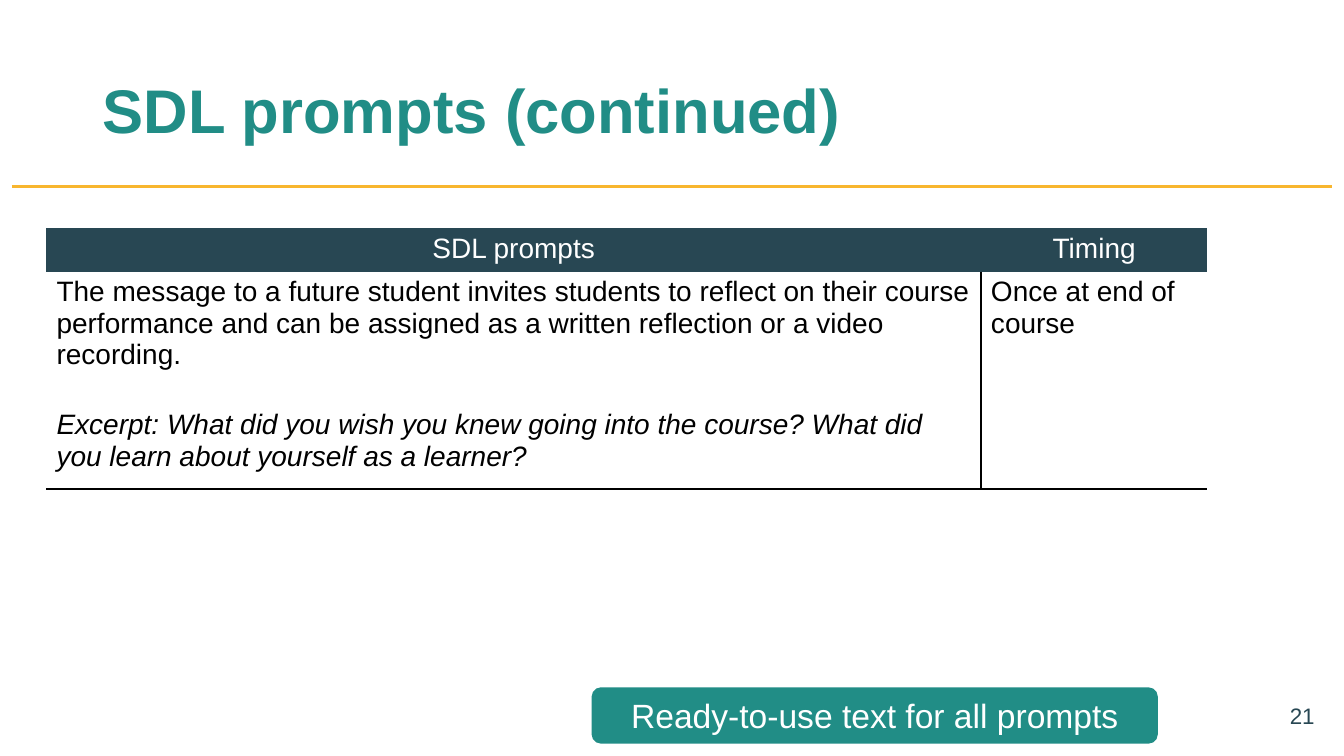
from pptx import Presentation
from pptx.dml.color import RGBColor
from pptx.enum.shapes import MSO_CONNECTOR as CONN, MSO_SHAPE as SHAPE
from pptx.enum.text import MSO_ANCHOR as ANCHOR, PP_ALIGN as ALIGN
from pptx.oxml import parse_xml
from pptx.oxml.ns import nsdecls, qn
from pptx.util import Cm, Pt

COLORS = {"teal": "218D86", "navy": "284753", "gold": "F8B62F",
          "white": "FFFFFF", "black": "000000"}
NO_STYLE = "{2D5ABB26-0587-4C30-8999-92F81FD0307C}"


def rgb(name):
    return RGBColor.from_string(COLORS[name])


def write(p, text, size=20, color="black", bold=False, italic=False,
          align=ALIGN.LEFT, before=None, after=None, spacing=None):
    p.alignment = align
    p.line_spacing = spacing
    if before is not None:
        p.space_before = Pt(before)
    if after is not None:
        p.space_after = Pt(after)
    r = p.add_run()
    r.text = text
    f = r.font
    f.name, f.size, f.bold, f.italic = "Arial", Pt(size), bold, italic
    f.color.rgb = rgb(color)


class SlideBuilder:
    """Draws styled elements on one slide."""

    def __init__(self, slide):
        self.shapes = slide.shapes

    def rule(self, x1, x2, y, color, width):
        line = self.shapes.add_connector(CONN.STRAIGHT, Cm(x1), Cm(y), Cm(x2), Cm(y))
        line.line.color.rgb = rgb(color)
        line.line.width = Pt(width)
        line._element.spPr.append(parse_xml(f"<a:effectLst {nsdecls('a')}/>"))

    def text(self, box, text, **fmt):
        tf = self.shapes.add_textbox(*map(Cm, box)).text_frame
        tf.word_wrap = True
        tf.vertical_anchor = ANCHOR.MIDDLE
        write(tf.paragraphs[0], text, **fmt)

    def button(self, box, text, fill, **fmt):
        sp = self.shapes.add_shape(SHAPE.ROUNDED_RECTANGLE, *map(Cm, box))
        sp.shadow.inherit = False
        sp.fill.solid()
        sp.fill.fore_color.rgb = rgb(fill)
        sp.line.fill.background()
        tf = sp.text_frame
        tf.word_wrap = True
        tf.vertical_anchor = ANCHOR.MIDDLE
        write(tf.paragraphs[0], text, align=ALIGN.CENTER, **fmt)

    def border(self, cell, *sides):
        tc_pr = cell._tc.get_or_add_tcPr()
        for i, side in enumerate(sides):
            tc_pr.insert(i, parse_xml(
                f'<a:ln{side} {nsdecls("a")} w="12700"><a:solidFill>'
                f'<a:srgbClr val="{COLORS["black"]}"/></a:solidFill></a:ln{side}>'))

    def table(self, x, y, widths, heights, headers, body):
        t = self.shapes.add_table(2, len(widths), Cm(x), Cm(y),
                                  Cm(sum(widths)), Cm(sum(heights))).table
        t.horz_banding = False
        t._tbl.tblPr.find(qn("a:tableStyleId")).text = NO_STYLE
        for row, height in zip(t.rows, heights):
            row.height = Cm(height)
        for i, (width, header, paragraphs) in enumerate(zip(widths, headers, body)):
            t.columns[i].width = Cm(width)
            head, cell = t.cell(0, i), t.cell(1, i)
            head.fill.solid()
            head.fill.fore_color.rgb = rgb("navy")
            write(head.text_frame.paragraphs[0], header, color="white", align=ALIGN.CENTER)
            cell.fill.background()
            self.border(cell, "L" if i else "R", "B")
            tf = cell.text_frame
            for n, (text, fmt) in enumerate(paragraphs):
                write(tf.add_paragraph() if n else tf.paragraphs[0], text, **fmt)


def main():
    prs = Presentation()
    prs.slide_width, prs.slide_height = Cm(33.87), Cm(19.05)
    s = SlideBuilder(prs.slides.add_slide(prs.slide_layouts[6]))
    s.rule(0.3, 33.58, 4.7, "gold", 1.5)
    s.text((25.76, 17.53, 7.62, 1.02), "21", size=16, color="navy", align=ALIGN.RIGHT)
    s.text((2.34, 1.02, 26.85, 3.68), "SDL prompts (continued)",
           size=44, color="teal", bold=True, spacing=0.9)
    s.table(1.17, 5.74, (23.55, 5.71), (1.02, 5.21), ("SDL prompts", "Timing"), (
        [("The message to a future student invites students to reflect on their "
          "course performance and can be assigned as a written reflection or a "
          "video recording.", {"after": 2}),
         ("Excerpt: What did you wish you knew going into the course? What did you "
          "learn about yourself as a learner?", {"italic": True, "before": 26})],
        [("Once at end of course", {"after": 2})]))
    s.button((14.91, 17.32, 14.27, 1.42), "Ready-to-use text for all prompts",
             "teal", size=24, color="white")
    prs.save("out.pptx")


if __name__ == "__main__":
    main()
